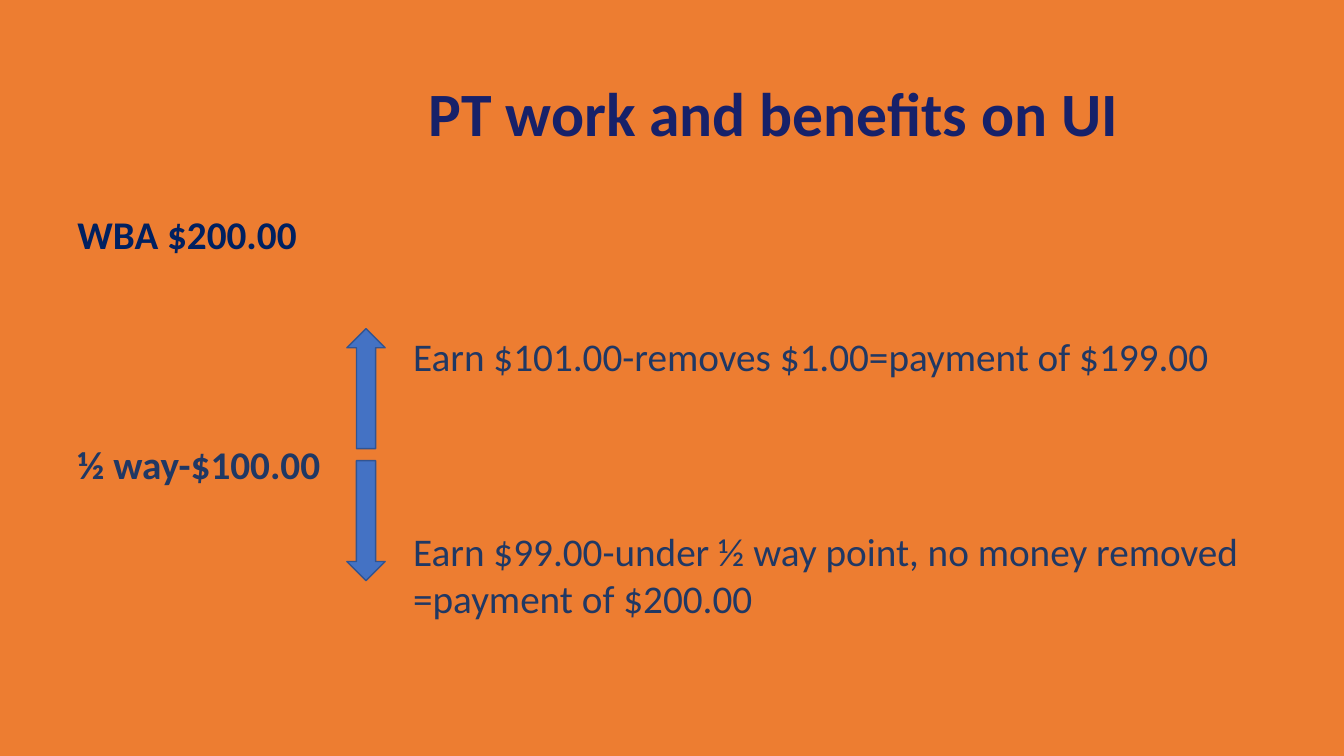
from pptx import Presentation
from pptx.dml.color import RGBColor
from pptx.enum.shapes import MSO_SHAPE
from pptx.enum.text import MSO_ANCHOR, PP_ALIGN
from pptx.util import Pt

PX = 9144  # EMU per px, 100 px to the inch
DOWN_ARROW = MSO_SHAPE.DOWN_ARROW
TOP, MIDDLE = MSO_ANCHOR.TOP, MSO_ANCHOR.MIDDLE
LEFT, CENTER = PP_ALIGN.LEFT, PP_ALIGN.CENTER

ORANGE, BLUE, BLUE_EDGE = "ED7D31", "4472C4", "325491"
TITLE_NAVY, DEEP_NAVY, SLATE_NAVY = "172169", "002060", "203864"


def color(hex_string):
    return RGBColor.from_string(hex_string)


def emu(*lengths):
    return [length * PX for length in lengths]


def add_text(slide, box, text, ink, size=28, bold=False, anchor=TOP,
             align=LEFT, line_spacing=1.0):
    frame = slide.shapes.add_textbox(*emu(*box)).text_frame
    frame.word_wrap = True
    frame.vertical_anchor = anchor
    paragraph = frame.paragraphs[0]
    paragraph.text = text
    paragraph.alignment = align
    paragraph.line_spacing = line_spacing
    font = paragraph.runs[0].font
    for name, value in {"name": "Calibri", "size": Pt(size), "bold": bold}.items():
        setattr(font, name, value)
    font.color.rgb = color(ink)


def add_title(slide, box):
    add_text(slide, box, "PT work and benefits on UI", TITLE_NAVY, size=44,
             bold=True, anchor=MIDDLE, align=CENTER, line_spacing=0.9)


def add_benefit_labels(slide, box):
    left, top, width, height = box
    add_text(slide, (left, top, width, 68), "WBA $200.00", DEEP_NAVY,
             bold=True, line_spacing=0.9)
    add_text(slide, (left, top + height - 57, width, 57), "½ way-$100.00",
             SLATE_NAVY, bold=True)


def add_arrow_pair(slide, box, gap=12):
    """Place an up arrow above a down arrow, filling the box."""
    left, top, width, height = box
    length = (height - gap) // 2
    for index, rotation in enumerate((180, 0)):
        arrow = slide.shapes.add_shape(
            DOWN_ARROW, *emu(left, top + index * (length + gap), width, length))
        arrow.rotation = rotation
        arrow.shadow.inherit = False
        arrow.fill.solid()
        arrow.fill.fore_color.rgb = color(BLUE)
        arrow.line.color.rgb = color(BLUE_EDGE)
        arrow.line.width = Pt(1)


def add_earning_cases(slide, box):
    left, top, width, height = box
    add_text(slide, (left, top, width, 57),
             "Earn $101.00-removes $1.00=payment of $199.00", SLATE_NAVY)
    add_text(slide, (left, top + height - 104, width, 104),
             "Earn $99.00-under ½ way point, no money removed "
             "=payment of $200.00", SLATE_NAVY)


def main():
    presentation = Presentation()
    presentation.slide_width, presentation.slide_height = emu(1333, 750)
    slide = presentation.slides.add_slide(presentation.slide_layouts[6])
    slide.background.fill.solid()
    slide.background.fill.fore_color.rgb = color(ORANGE)

    add_title(slide, (351, 67, 833, 97))
    add_benefit_labels(slide, (67, 209, 268, 280))
    add_arrow_pair(slide, (344, 326, 38, 250))
    add_earning_cases(slide, (400, 325, 844, 297))
    presentation.save("out.pptx")


if __name__ == "__main__":
    main()
